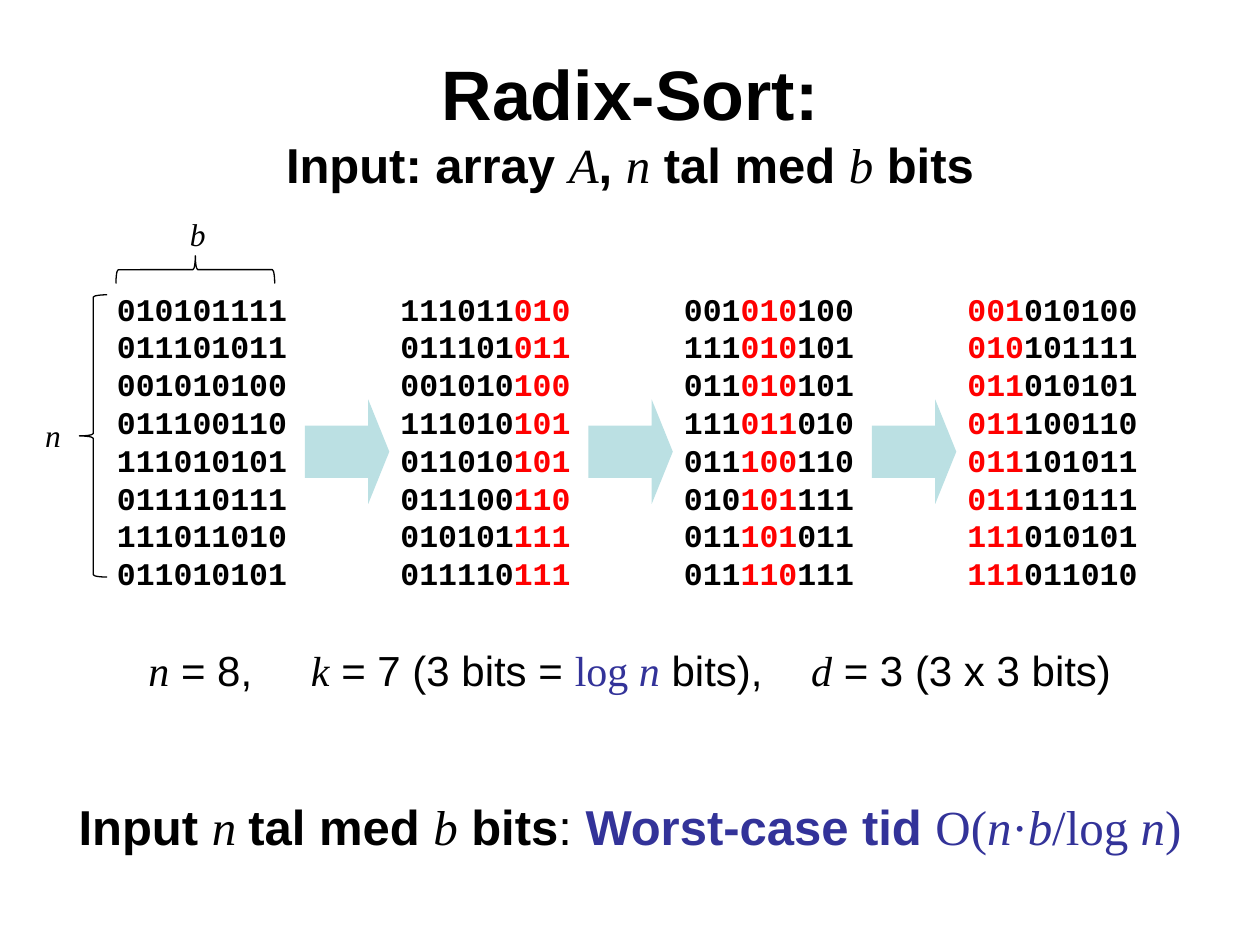
from lxml import etree
from pptx import Presentation
from pptx.dml.color import RGBColor
from pptx.enum.shapes import MSO_SHAPE as Shape
from pptx.enum.text import MSO_ANCHOR as Anchor, PP_ALIGN as Align
from pptx.oxml.ns import qn
from pptx.util import Inches, Pt

BLACK = RGBColor(0x00, 0x00, 0x00)
RED = RGBColor(0xFF, 0x00, 0x00)
BLUE = RGBColor(0x33, 0x33, 0x99)
TEAL = RGBColor(0xBB, 0xE0, 0xE3)

BOLD = {"bold": True}
PLAIN = {}
UPRIGHT = {"name": "Times New Roman"}
MATH = {"name": "Times New Roman", "italic": True}
BLUE_UPRIGHT = {**UPRIGHT, "color": BLUE}
BLUE_MATH = {**MATH, "color": BLUE}
BITS = {"name": "Courier New", "bold": True}
MARKED_BITS = {**BITS, "color": RED}

COLUMN_LEFT, COLUMN_STEP = 0.83, 2.25
ARROW_LEFT = 2.42
DIGIT = 3

COLUMNS = [
    (None, "010101111 011101011 001010100 011100110 111010101 011110111 111011010 011010101"),
    (6, "111011010 011101011 001010100 111010101 011010101 011100110 010101111 011110111"),
    (3, "001010100 111010101 011010101 111011010 011100110 010101111 011101011 011110111"),
    (0, "001010100 010101111 011010101 011100110 011101011 011110111 111010101 111011010"),
]


class SlideBuilder:
    """Holds the text style and the current slide, and adds elements to it."""

    def __init__(self, slide):
        self.slide = slide
        self.style = {"name": "Arial", "bold": False, "italic": False, "color": BLACK}

    def add_text(self, paragraph, text, size, changes):
        run = paragraph.add_run()
        run.text = text
        for key, value in {**self.style, "size": Pt(size), **changes}.items():
            if key == "color":
                run.font.color.rgb = value
            else:
                setattr(run.font, key, value)

    def add_box(self, left, top, width, height, lines, wrap=True, break_lines=False, **formats):
        box = self.slide.shapes.add_textbox(
            Inches(left), Inches(top), Inches(width), Inches(height))
        frame = box.text_frame
        frame.word_wrap = wrap
        for index, (size, runs) in enumerate(lines):
            paragraph = frame.paragraphs[-1]
            if index and break_lines:
                paragraph.add_line_break()
            elif index:
                paragraph = frame.add_paragraph()
            for key, value in formats.items():
                setattr(paragraph, key, value)
            for text, changes in runs:
                self.add_text(paragraph, text, size, changes)
        return frame

    def add_tabs(self, paragraph, positions):
        properties = paragraph._p.get_or_add_pPr()
        tabs = etree.SubElement(properties, qn("a:tabLst"))
        for position in positions:
            etree.SubElement(tabs, qn("a:tab"), pos=str(Inches(position)), algn="l")

    def add_bits(self, left, marked, numbers):
        lines = []
        for number in numbers.split():
            start = len(number) if marked is None else marked
            end = start + DIGIT
            parts = [(number[:start], BITS), (number[start:end], MARKED_BITS), (number[end:], BITS)]
            lines.append((18, [part for part in parts if part[0]]))
        self.add_box(left, 2.25, 1.67, 2.5, lines)

    def add_arrow(self, left):
        shape = self.slide.shapes.add_shape(
            Shape.RIGHT_ARROW, Inches(left), Inches(3.17), Inches(0.67), Inches(0.83))
        shape.adjustments[1] = 0.25
        shape.shadow.inherit = False
        shape.fill.solid()
        shape.fill.fore_color.rgb = TEAL
        shape.line.fill.background()

    def add_brace(self, left, top, height, rotation=0):
        shape = self.slide.shapes.add_shape(
            Shape.LEFT_BRACE, Inches(left), Inches(top), Inches(0.22), Inches(height))
        shape.rotation = rotation
        shape.shadow.inherit = False
        shape.fill.background()
        shape.line.color.rgb = BLACK
        shape.line.width = Pt(0.75)

    def add_label(self, left, top, text):
        self.add_box(left, top, 0.33, 0.4, [(18, [(text, MATH)])], wrap=False)


def main():
    presentation = Presentation()
    presentation.slide_width, presentation.slide_height = Inches(10), Inches(7.5)
    builder = SlideBuilder(presentation.slides.add_slide(presentation.slide_layouts[6]))

    title = builder.add_box(0.75, 0.33, 8.5, 1.27, [
        (40, [("Radix-Sort:", BOLD)]),
        (28, [("Input: array ", BOLD), ("A", MATH), (", ", BOLD), ("n", MATH),
              (" tal med ", BOLD), ("b", MATH), (" bits", BOLD)]),
    ], break_lines=True, alignment=Align.CENTER)
    title.vertical_anchor = Anchor.MIDDLE

    for index, (marked, numbers) in enumerate(COLUMNS):
        builder.add_bits(COLUMN_LEFT + index * COLUMN_STEP, marked, numbers)
    for index in range(len(COLUMNS) - 1):
        builder.add_arrow(ARROW_LEFT + index * COLUMN_STEP)

    summary = builder.add_box(0, 5.07, 10, 1.8, [
        (24, [("\t", PLAIN), ("n", MATH), (" = 8,\t", PLAIN), ("k", MATH),
              (" = 7 (3 bits = ", PLAIN), ("log ", BLUE_UPRIGHT), ("n", BLUE_MATH),
              (" bits),\t", PLAIN), ("d", MATH), (" = 3 (3 x 3 bits)", PLAIN)]),
        (28, [("Input ", BOLD), ("n ", MATH), ("tal med ", BOLD), ("b", MATH),
              (" bits", BOLD), (": ", PLAIN), ("Worst-case tid ", {**BOLD, "color": BLUE}),
              ("O(", BLUE_UPRIGHT), ("n", BLUE_MATH), ("·", BLUE_UPRIGHT), ("b", BLUE_MATH),
              ("/log ", BLUE_UPRIGHT), ("n", BLUE_MATH), (")", BLUE_UPRIGHT)]),
    ])
    measures, conclusion = summary.paragraphs
    builder.add_tabs(measures, [1.08, 2.37, 6.34])
    conclusion.alignment = Align.CENTER
    conclusion.space_before = Pt(58)

    builder.add_brace(0.63, 2.34, 2.24)
    builder.add_brace(1.44, 1.51, 1.26, rotation=90)
    builder.add_label(0.26, 3.25, "n")
    builder.add_label(1.41, 1.66, "b")
    presentation.save("out.pptx")


if __name__ == "__main__":
    main()
